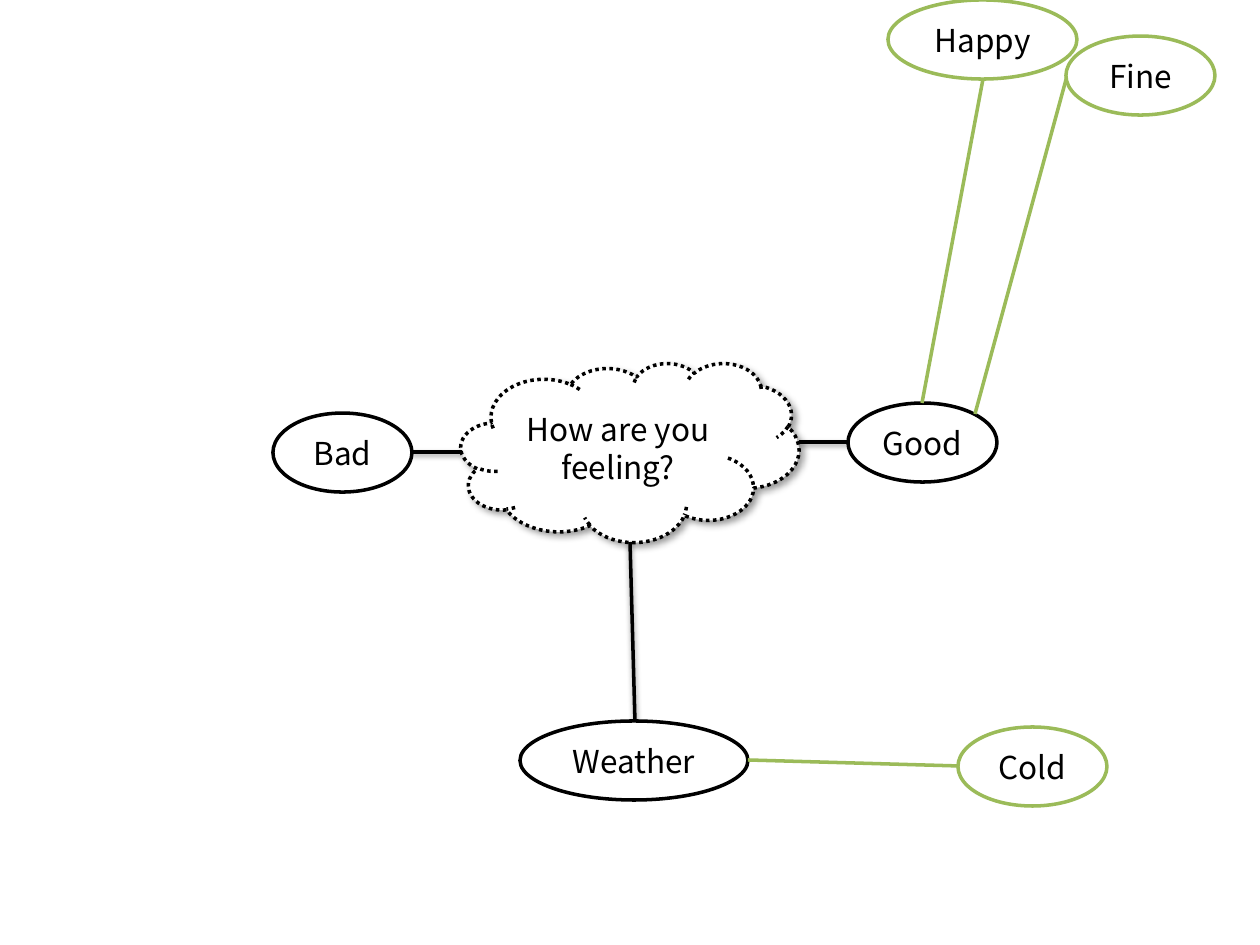
"""Build a mind map slide about feelings."""
from dataclasses import dataclass

from lxml import etree
from pptx import Presentation
from pptx.dml.color import RGBColor
from pptx.enum.dml import MSO_LINE
from pptx.enum.shapes import MSO_CONNECTOR, MSO_SHAPE
from pptx.enum.text import MSO_ANCHOR, PP_ALIGN
from pptx.oxml.ns import qn
from pptx.util import Pt

CLOUD, OVAL = MSO_SHAPE.CLOUD, MSO_SHAPE.OVAL
LINE, DOTS = MSO_CONNECTOR.STRAIGHT, MSO_LINE.ROUND_DOT
CENTER, MIDDLE = PP_ALIGN.CENTER, MSO_ANCHOR.MIDDLE
SCALE = 914400 / 126
WIDE, HIGH, OVAL_HIGH = 1260, 945, 79


@dataclass
class Theme:
    font: str = "Noto Sans CJK KR"
    size: int = 18
    stroke: int = 2
    ink: str = "000000"
    green: str = "9BBB59"
    paper: str = "FFFFFF"


THEME = Theme()
SOFT = dict(alpha=40, blur=4, dist=3, angle=45)
DROP = dict(alpha=38, blur=3.1, dist=1.6, angle=90)

TOPIC = ("How are you feeling?", (461, 363, 338, 179))
BRANCHES = [
    ("Bad", (273, 413, 139), (462, 452, 412, 452)),
    ("Good", (848, 403, 149), (849, 442, 799, 442)),
    ("Weather", (520, 721, 228), (630, 542, 635, 721)),
]
LEAVES = [
    ("Fine", (1066, 36, 149), (1067, 76, 975, 414)),
    ("Happy", (888, 0, 189), (983, 79, 922, 403)),
    ("Cold", (958, 727, 149), (959, 766, 748, 760)),
]


def emu(*sizes):
    return [round(size * SCALE) for size in sizes]


def set_shadow(shape, alpha, blur, dist, angle):
    effects = shape._element.spPr.find(qn("a:effectLst"))
    outer = etree.SubElement(
        effects, qn("a:outerShdw"), blurRad=str(Pt(blur)), dist=str(Pt(dist)),
        dir=str(angle * 60000), algn="ctr", rotWithShape="0")
    tint = etree.SubElement(outer, qn("a:srgbClr"), val=THEME.ink)
    etree.SubElement(tint, qn("a:alpha"), val=str(alpha * 1000))


def set_line(shape, color, shadow=None):
    shape.line.color.rgb = RGBColor.from_string(color)
    shape.line.width = Pt(THEME.stroke)
    etree.SubElement(shape._element.spPr, qn("a:effectLst"))
    if shadow:
        set_shadow(shape, **shadow)


def set_text(shape, text, size=THEME.size, color=THEME.ink, align=CENTER):
    frame = shape.text_frame
    frame.word_wrap = True
    frame.vertical_anchor = MIDDLE
    frame.text = text
    para = frame.paragraphs[0]
    para.alignment = align
    font = para.runs[0].font
    font.name, font.size = THEME.font, Pt(size)
    font.color.rgb = RGBColor.from_string(color)


def add_node(slide, kind, text, box, color, shadow=None):
    node = slide.shapes.add_shape(kind, *emu(*box))
    node.fill.solid()
    node.fill.fore_color.rgb = RGBColor.from_string(THEME.paper)
    set_line(node, color, shadow)
    set_text(node, text)
    return node


def add_group(slide, items, color, shadow=None):
    for text, box, ends in items:
        link = slide.shapes.add_connector(LINE, *emu(*ends))
        set_line(link, color, shadow)
        add_node(slide, OVAL, text, (*box, OVAL_HIGH), color)


def main():
    deck = Presentation()
    deck.slide_width, deck.slide_height = emu(WIDE, HIGH)
    slide = deck.slides.add_slide(deck.slide_layouts[6])
    topic = add_node(slide, CLOUD, *TOPIC, THEME.ink, SOFT)
    topic.line.dash_style = DOTS
    add_group(slide, BRANCHES, THEME.ink, DROP)
    add_group(slide, LEAVES, THEME.green)
    deck.save("out.pptx")


if __name__ == "__main__":
    main()
